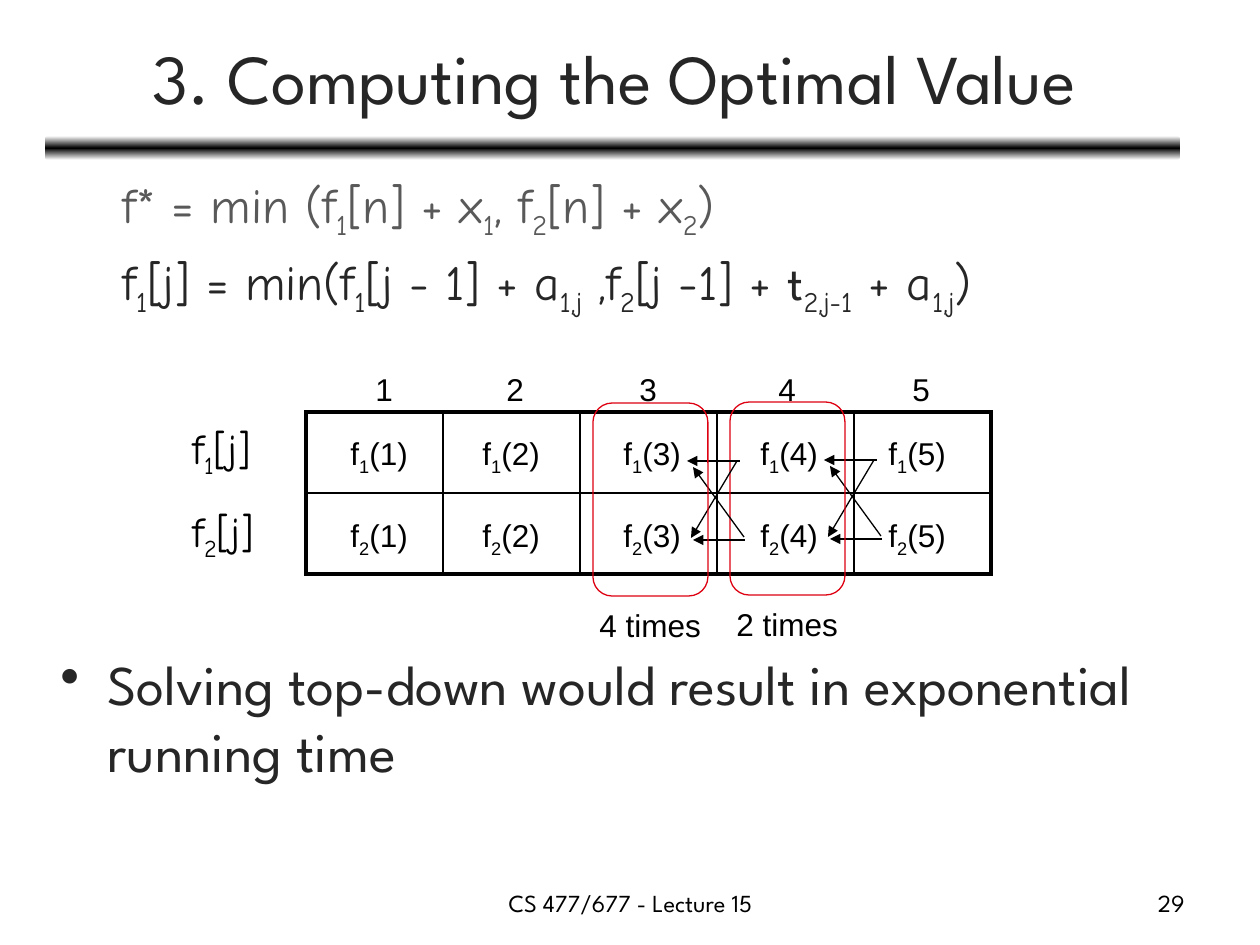
from copy import deepcopy
from dataclasses import dataclass

from lxml.etree import SubElement
from pptx import Presentation
from pptx.dml.color import RGBColor
from pptx.enum.shapes import MSO_CONNECTOR, MSO_SHAPE
from pptx.enum.text import MSO_ANCHOR, PP_ALIGN
from pptx.oxml.ns import qn
from pptx.util import Emu, Pt

# Content: _x_ marks a subscript, |x| marks the heading font
TITLE = "3. Computing the Optimal Value"
FORMULAS = [
    ("f* = min (f_1_[n] + x_1_, f_2_[n] + x_2_)", "595959"),
    ("f_1_[j] = min(f_1_[j - 1] + a_1,j_ ,f_2_[j -1] + |t|_2,j-1_ + a_1,j_)", "262626"),
]
CONCLUSION = "Solving top-down would result in exponential running time"
FOOTER, PAGE = "CS 477/677 - Lecture 15", "29"
ROW_LABELS = ["f_1_[j]", "f_2_[j]"]
COLUMNS = [  # heading, heading left, entry left
    (1, 363, 338), (2, 494, 470), (3, 627, 611), (4, 766, 748), (5, 900, 876),
]
REPEATS = ["2 times", "4 times"]  # column 4, then column 3
DEPENDENCIES = [  # arrows from column 5 to column 4
    (877, 460, 824, 460), (874, 460, 828, 537),
    (881, 536, 830, 466), (882, 539, 830, 539),
]


@dataclass(frozen=True)
class Theme:
    heading: str = "League Spartan"
    formula: str = "Comic Neue"
    plain: str = "Arial"
    dark: str = "262626"
    black: str = "000000"
    white: str = "FFFFFF"
    red: str = "DD0111"
    title_size: int = 40
    body_size: int = 32
    formula_size: int = 28
    label_size: int = 24
    cell_size: int = 18
    footer_size: int = 14
    thin: float = 0.75
    inner: float = 1
    outer: float = 2.25


THEME = Theme()
GRID_LEFT, GRID_TOP, COL_W, ROW_H = 306, 412, 137, 81


def px(length):
    return Emu(round(length * 914400 / 126))


def rgb(value):
    return RGBColor.from_string(value)


def add_text(slide, text, box, *, size, font=THEME.plain, color=THEME.black,
             align=PP_ALIGN.LEFT, anchor=MSO_ANCHOR.TOP, wrap=False, bullet_indent=0):
    label = slide.shapes.add_textbox(*map(px, box))
    frame = label.text_frame
    frame.word_wrap = wrap
    frame.vertical_anchor = anchor
    paragraph = frame.paragraphs[0]
    paragraph.alignment = align
    for i, section in enumerate(text.split("|")):
        for j, part in enumerate(section.split("_")):
            if not part:
                continue
            run = paragraph.add_run()
            run.text = part
            run.font.size = Pt(size)
            run.font.name = THEME.heading if i % 2 else font
            run.font.color.rgb = rgb(color)
            if j % 2:
                run.font._element.set("baseline", "-25000")
    if bullet_indent:
        props = paragraph._p.get_or_add_pPr()
        props.set("marL", str(px(bullet_indent)))
        props.set("indent", str(-px(bullet_indent)))
        SubElement(props, qn("a:buChar"), char="•")


def add_arrow(slide, x1, y1, x2, y2):
    arrow = slide.shapes.add_connector(MSO_CONNECTOR.STRAIGHT, px(x1), px(y1), px(x2), px(y2))
    arrow.line.color.rgb = rgb(THEME.black)
    arrow.line.width = Pt(THEME.thin)
    SubElement(arrow.line._get_or_add_ln(), qn("a:tailEnd"), type="triangle")
    SubElement(arrow._element.spPr, qn("a:effectLst"))


def add_rounded(slide, box):
    outline = slide.shapes.add_shape(MSO_SHAPE.ROUNDED_RECTANGLE, *map(px, box))
    outline.shadow.inherit = False
    return outline


def add_rule(slide):
    rule = add_rounded(slide, (45, 136, 1135, 24))
    rule.line.fill.background()
    rule.fill.gradient()
    rule.fill.gradient_angle = 90
    first, last = rule.fill.gradient_stops
    first.color.rgb, first.position = rgb(THEME.white), 0
    last.color.rgb, last.position = rgb(THEME.black), 0.5
    stops = rule._element.spPr.find(".//" + qn("a:gsLst"))
    end = deepcopy(stops[0])
    end.set("pos", "100000")
    stops.append(end)


def add_grid(slide, rows, cols):
    grid = slide.shapes.add_table(rows, cols, px(GRID_LEFT), px(GRID_TOP),
                                  px(COL_W * cols), px(ROW_H * rows)).table
    grid.first_row = grid.horz_banding = False
    for column in grid.columns:
        column.width = px(COL_W)
    for r in range(rows):
        grid.rows[r].height = px(ROW_H)
        for c in range(cols):
            cell = grid.cell(r, c)
            edges = {"a:lnL": c == 0, "a:lnR": c == cols - 1,
                     "a:lnT": r == 0, "a:lnB": r == rows - 1}
            props = cell._tc.get_or_add_tcPr()
            for tag, is_outer in edges.items():
                width = THEME.outer if is_outer else THEME.inner
                border = SubElement(props, qn(tag), w=str(Pt(width)))
                fill = SubElement(border, qn("a:solidFill"))
                SubElement(fill, qn("a:srgbClr"), val=THEME.black)
            cell.fill.background()


def main():
    deck = Presentation()
    deck.slide_width, deck.slide_height = px(1260), px(945)
    slide = deck.slides.add_slide(deck.slide_layouts[6])

    # Title and rule
    add_rule(slide)
    add_text(slide, TITLE, (47, 14, 1134, 125), size=THEME.title_size, font=THEME.heading,
             color=THEME.dark, align=PP_ALIGN.CENTER, anchor=MSO_ANCHOR.MIDDLE, wrap=True)

    # Formulas and conclusion
    for i, (formula, color) in enumerate(FORMULAS):
        add_text(slide, formula, (110, 168 + 77 * i, 1100, 70), size=THEME.formula_size,
                 font=THEME.formula, color=color, wrap=True)
    add_text(slide, CONCLUSION, (48, 643, 1192, 150), size=THEME.body_size,
             font=THEME.heading, color=THEME.dark, wrap=True, bullet_indent=47)

    # Grid with its headings and entries
    add_grid(slide, len(ROW_LABELS), len(COLUMNS))
    for r, row_label in enumerate(ROW_LABELS):
        add_text(slide, row_label, (180, 416 + 83 * r, 110, 63),
                 size=THEME.label_size, font=THEME.formula)
    for number, heading_left, entry_left in COLUMNS:
        add_text(slide, str(number), (heading_left, 364, 43, 50), size=THEME.cell_size)
        for r in range(len(ROW_LABELS)):
            add_text(slide, f"f_{r + 1}_({number})", (entry_left, 428 + 82 * r, 84, 50),
                     size=THEME.cell_size)

    # Repeated computations, one column further left each time
    for step, repeat in enumerate(REPEATS):
        dx, dy = -COL_W * step, step
        for x1, y1, x2, y2 in DEPENDENCIES:
            add_arrow(slide, x1 + dx, y1 + dy, x2 + dx, y2 + dy)
        marker = add_rounded(slide, (730 + dx, 402 + dy, 115, 193))
        marker.fill.background()
        marker.line.color.rgb = rgb(THEME.red)
        marker.line.width = Pt(THEME.thin)
        add_text(slide, repeat, (724 + dx, 599 + dy, 127, 50), size=THEME.cell_size)

    # Footer
    add_text(slide, FOOTER, (431, 882, 399, 44), size=THEME.footer_size,
             font=THEME.heading, align=PP_ALIGN.CENTER, wrap=True)
    add_text(slide, PAGE, (903, 882, 294, 44), size=THEME.footer_size,
             font=THEME.heading, align=PP_ALIGN.RIGHT, wrap=True)

    deck.save("out.pptx")


if __name__ == "__main__":
    main()
